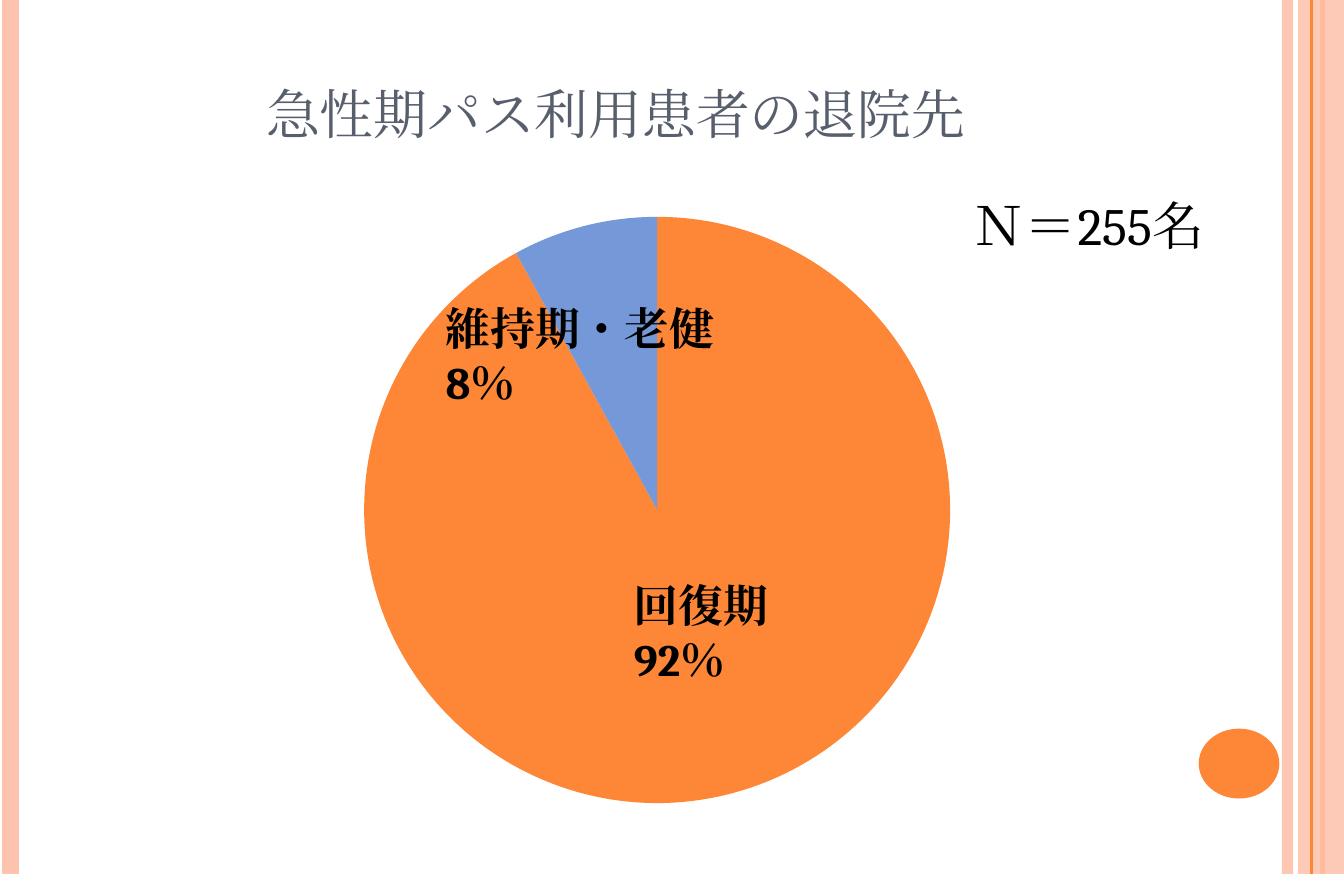
from lxml import etree
from pptx import Presentation
from pptx.chart.data import CategoryChartData
from pptx.dml.color import RGBColor
from pptx.enum.chart import XL_CHART_TYPE as CT
from pptx.enum.shapes import MSO_CONNECTOR as MC, MSO_SHAPE as MS
from pptx.enum.text import MSO_ANCHOR as MA, PP_ALIGN as PA
from pptx.oxml import parse_xml
from pptx.oxml.ns import nsdecls, qn
from pptx.util import Inches, Pt

COLORS = {"pink": "FEC3AE", "orange": "FE8637", "blue": "7598D9",
          "slate": "575F6D", "black": "000000"}
FONT = "Cambria"


def paint(fill, color, alpha=100):
    fill.solid()
    fill.fore_color.rgb = RGBColor.from_string(COLORS[color])
    if alpha < 100:
        clr = fill._xPr.find(".//" + qn("a:srgbClr"))
        etree.SubElement(clr, qn("a:alpha")).set("val", str(alpha * 1000))


def add_text(x, y, w, h, text, size, color="black", bold=False):
    sp = slide.shapes.add_textbox(Inches(x), Inches(y), Inches(w), Inches(h))
    tf = sp.text_frame
    tf.word_wrap = True
    r = tf.paragraphs[0].add_run()
    r.text = text
    r.font.name, r.font.size, r.font.bold = FONT, Pt(size), bold
    r.font.color.rgb = RGBColor.from_string(COLORS[color])
    # East Asian font and language
    rPr = r._r.get_or_add_rPr()
    rPr.set("lang", "ja-JP")
    ea = etree.Element(qn("a:ea"))
    ea.set("typeface", FONT)
    rPr.find(qn("a:latin")).addnext(ea)
    return tf


prs = Presentation()
prs.slide_width, prs.slide_height = Inches(5), Inches(3.25)
slide = prs.slides.add_slide(prs.slide_layouts[6])

# Vertical stripes, with the right-hand band between them
for x, color, width, alpha in [(4.79, "pink", 3, 93), (0.04, "pink", 4.5, 100),
                               (4.92, "orange", 1.5, 100), (None, "pink", 0, 87),
                               (4.88, "orange", 0.75, 100)]:
    if x is None:
        sp = slide.shapes.add_shape(MS.RECTANGLE, Inches(4.83), 0, Inches(0.17), Inches(3.25))
        sp.shadow.inherit = False
        sp.line.fill.background()
        paint(sp.fill, color, alpha)
        continue
    line = slide.shapes.add_connector(MC.STRAIGHT, Inches(x), 0, Inches(x), Inches(3.25))
    line.line.width = Pt(width)
    paint(line.line.fill, color, alpha)
    etree.SubElement(line._element.spPr, qn("a:effectLst"))

# Corner dot
dot = slide.shapes.add_shape(MS.OVAL, Inches(4.46), Inches(2.71), Inches(0.3), Inches(0.26))
dot.shadow.inherit = False
dot.line.fill.background()
paint(dot.fill, "orange")

# Title in small caps
tf = add_text(0.25, 0.13, 4.08, 0.54, "急性期パス利用患者の退院先", 18, "slate")
tf.vertical_anchor = MA.MIDDLE
tf.margin_left = tf.margin_right = Inches(0.05)
tf.margin_top = tf.margin_bottom = Inches(0.02)
p = tf.paragraphs[0]
p.alignment = PA.CENTER
p.runs[0]._r.get_or_add_rPr().set("cap", "small")

# Pie chart of discharge destinations
data = CategoryChartData()
data.categories = ["1", "2"]
data.add_series("Series 1", [92, 8])
chart = slide.shapes.add_chart(CT.PIE, Inches(0.37), Inches(0.66), Inches(4.15),
                               Inches(2.45), data).chart
chart.has_legend = chart.has_title = False
chart.font.name, chart.font.size = FONT, Pt(10)
chart.font.color.rgb = RGBColor.from_string(COLORS["black"])
plot = chart.plots[0]
plot.vary_by_categories = True
for i, color in enumerate(["orange", "blue"]):
    point = plot.series[0].points[i]
    paint(point.format.fill, color)
    point.format.line.fill.background()

# Fixed plot area
area = chart._chartSpace.find(".//" + qn("c:plotArea"))
for old in area.findall(qn("c:layout")):
    area.remove(old)
places = "".join(f'<c:{tag} val="{val}"/>' for tag, val in [
    ("layoutTarget", "inner"), ("xMode", "edge"), ("yMode", "edge"),
    ("x", 0.23), ("y", 0.06), ("w", 0.54), ("h", 0.89)])
area.insert(0, parse_xml(f'<c:layout {nsdecls("c")}><c:manualLayout>{places}'
                         '</c:manualLayout></c:layout>'))

# Slice labels and sample size
add_text(2.26, 2.1, 1.17, 0.3, "回復期　92％", 12, bold=True)
add_text(1.56, 1.07, 1.5, 0.3, "維持期・老健　8％", 12, bold=True)
add_text(3.52, 0.67, 1.09, 0.34, "Ｎ＝255名", 14)

prs.save("out.pptx")
